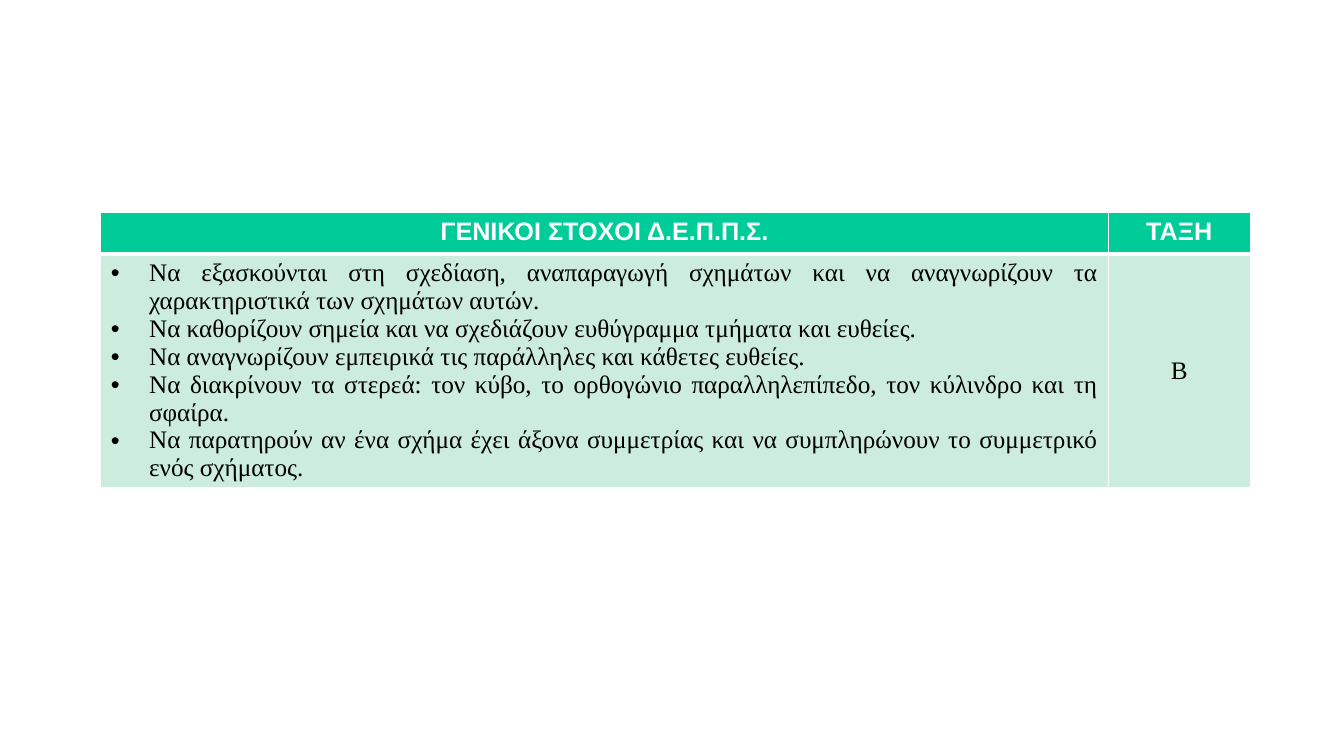
from dataclasses import dataclass

from lxml.etree import SubElement
from pptx import Presentation
from pptx.dml.color import RGBColor as Color
from pptx.enum.text import MSO_ANCHOR as Anchor, PP_ALIGN as Align
from pptx.oxml.ns import qn
from pptx.util import Inches, Pt


@dataclass(frozen=True)
class Theme:
    header_fill: str = "00CC99"
    body_fill: str = "CCECDE"
    header_text: str = "FFFFFF"
    body_text: str = "000000"
    border: str = "FFFFFF"
    header_font: str = "Arial"
    body_font: str = "Times New Roman"
    text_size: int = 18
    thin: int = 1
    thick: int = 3


THEME = Theme()
SLIDE_SIZE = (13.34, 7.5)
TABLE_ORIGIN = (1, 2.11)
COLUMN_WIDTHS = (10, 1.41)
ROW_HEIGHTS = (0.41, 2.31)
BULLET_INDENT = 0.38

HEADINGS = ("ΓΕΝΙΚΟΙ ΣΤΟΧΟΙ Δ.Ε.Π.Π.Σ.", "ΤΑΞΗ")
GOALS = (
    "Να εξασκούνται στη σχεδίαση, αναπαραγωγή σχημάτων και να αναγνωρίζουν τα χαρακτηριστικά των σχημάτων αυτών.",
    "Να καθορίζουν σημεία και να σχεδιάζουν ευθύγραμμα τμήματα και ευθείες.",
    "Να αναγνωρίζουν εμπειρικά τις παράλληλες και κάθετες ευθείες.",
    "Να διακρίνουν τα στερεά: τον κύβο, το ορθογώνιο παραλληλεπίπεδο, τον κύλινδρο και τη σφαίρα.",
    "Να παρατηρούν αν ένα σχήμα έχει άξονα συμμετρίας και να συμπληρώνουν το συμμετρικό ενός σχήματος.",
)
GRADE = "Β"


def add_borders(cell, top, bottom):
    properties = cell._tc.get_or_add_tcPr()
    widths = {"lnL": THEME.thin, "lnR": THEME.thin, "lnT": top, "lnB": bottom}
    for side, width in widths.items():
        line = SubElement(properties, qn(f"a:{side}"), w=str(Pt(width)))
        fill = SubElement(line, qn("a:solidFill"))
        SubElement(fill, qn("a:srgbClr"), val=THEME.border)


def add_bullet(para):
    properties = para._p.get_or_add_pPr()
    indent = Inches(BULLET_INDENT)
    properties.set("marL", str(indent))
    properties.set("indent", str(-indent))
    SubElement(properties, qn("a:buFont"), typeface=THEME.header_font)
    SubElement(properties, qn("a:buChar"), char="•")


def fill_cell(cell, lines, header=False, bulleted=False):
    add_borders(
        cell,
        THEME.thin if header else THEME.thick,
        THEME.thick if header else THEME.thin,
    )
    cell.fill.solid()
    cell.fill.fore_color.rgb = Color.from_string(
        THEME.header_fill if header else THEME.body_fill
    )
    frame = cell.text_frame
    frame.text = "\n".join(lines)
    for para in frame.paragraphs:
        para.alignment = Align.JUSTIFY if bulleted else Align.CENTER
        if bulleted:
            add_bullet(para)
        font = para.font
        font.name = THEME.header_font if header else THEME.body_font
        font.size = Pt(THEME.text_size)
        font.bold = header
        font.color.rgb = Color.from_string(
            THEME.header_text if header else THEME.body_text
        )


def add_goals_table(page):
    left, top = TABLE_ORIGIN
    table = page.shapes.add_table(
        len(ROW_HEIGHTS), len(COLUMN_WIDTHS), Inches(left), Inches(top),
        Inches(sum(COLUMN_WIDTHS)), Inches(sum(ROW_HEIGHTS)),
    ).table
    for column, width in zip(table.columns, COLUMN_WIDTHS):
        column.width = Inches(width)
    for row, height in zip(table.rows, ROW_HEIGHTS):
        row.height = Inches(height)
    for index, heading in enumerate(HEADINGS):
        fill_cell(table.cell(0, index), [heading], header=True)
    fill_cell(table.cell(1, 0), GOALS, bulleted=True)
    grade_cell = table.cell(1, 1)
    fill_cell(grade_cell, [GRADE])
    grade_cell.vertical_anchor = Anchor.MIDDLE


def main():
    deck = Presentation()
    deck.slide_width, deck.slide_height = map(Inches, SLIDE_SIZE)
    page = deck.slides.add_slide(deck.slide_layouts.get_by_name("Blank"))
    add_goals_table(page)
    deck.save("out.pptx")


if __name__ == "__main__":
    main()
